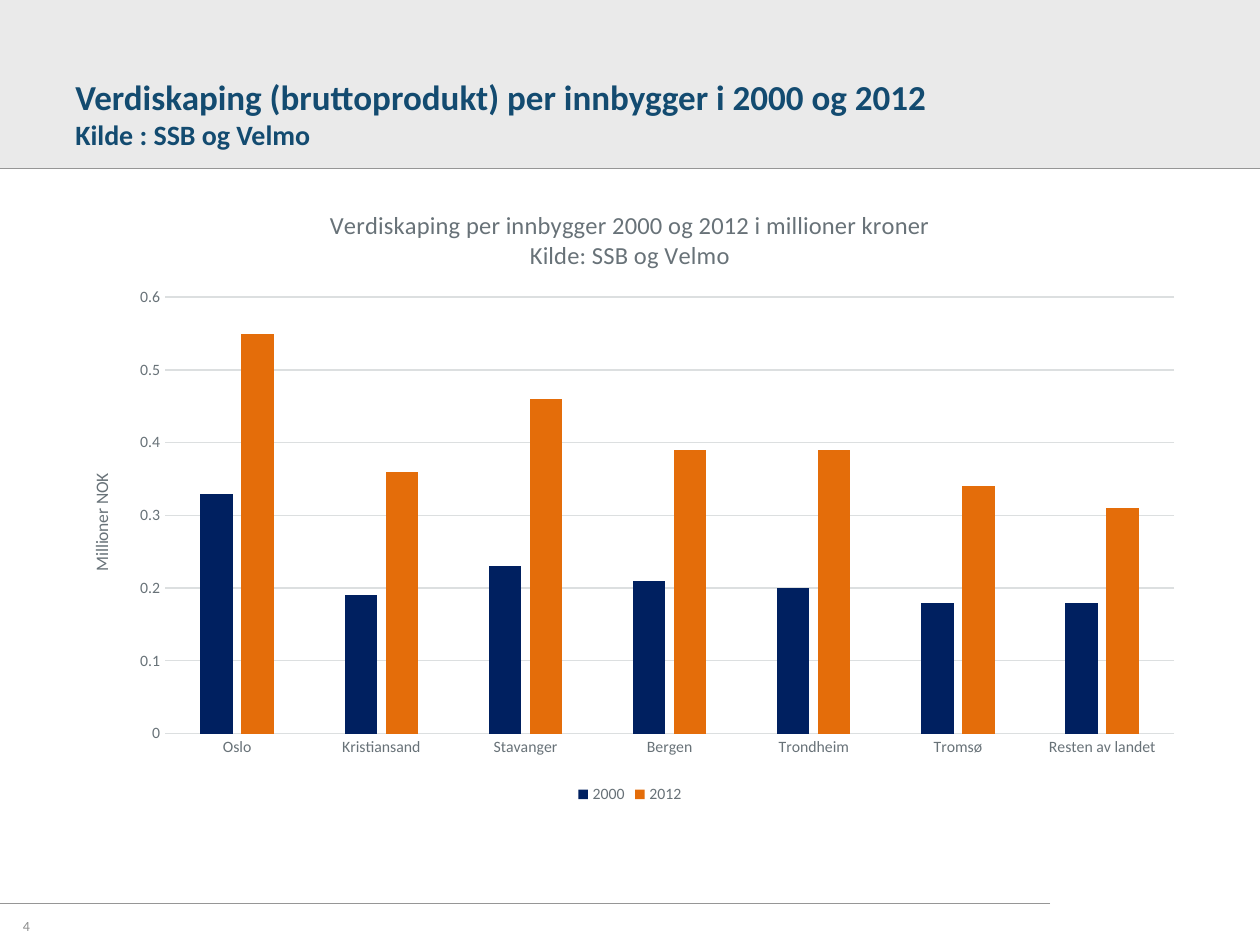
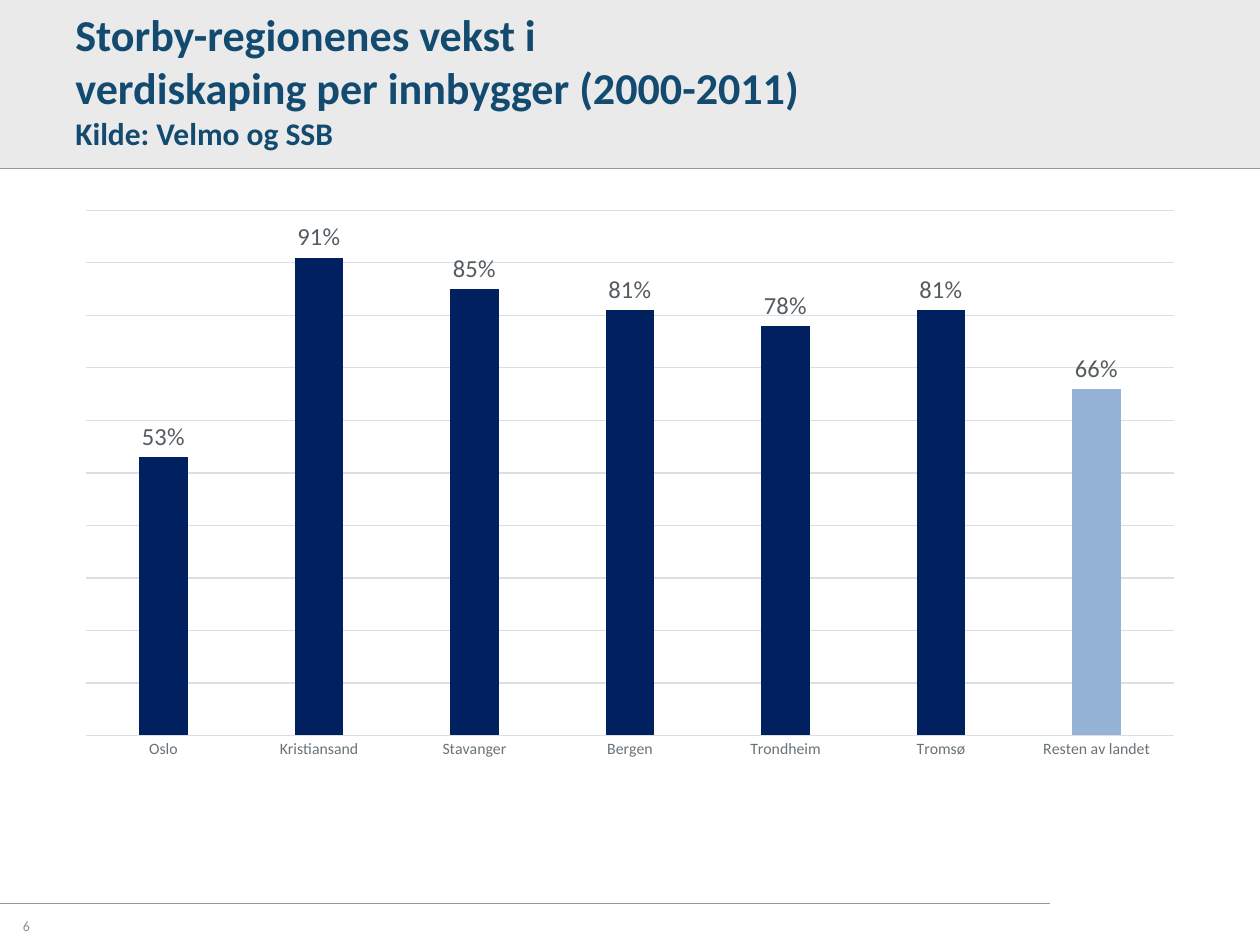
from lxml import etree
from pptx import Presentation
from pptx.chart.data import CategoryChartData
from pptx.dml.color import RGBColor
from pptx.enum.chart import (XL_CHART_TYPE as CHART, XL_LABEL_POSITION as LABEL,
                             XL_LEGEND_POSITION as LEGEND, XL_TICK_MARK as TICK)
from pptx.enum.shapes import MSO_CONNECTOR as CONNECTOR, MSO_SHAPE as SHAPE
from pptx.enum.text import MSO_ANCHOR as ANCHOR
from pptx.oxml.ns import qn
from pptx.util import Cm, Pt

BAND = RGBColor(0xEA, 0xEA, 0xEA)
RULE = RGBColor(0x96, 0x96, 0x96)
TITLE = RGBColor(0x13, 0x4B, 0x70)
NUMBER = RGBColor(0x8D, 0x8E, 0x8E)
AXIS_TEXT = RGBColor(0x68, 0x72, 0x78)
LABEL_TEXT = RGBColor(0x54, 0x5C, 0x61)
GRID = RGBColor(0xDC, 0xDF, 0xE0)
NAVY = RGBColor(0x00, 0x20, 0x60)
ORANGE = RGBColor(0xE4, 0x6D, 0x0A)
PALE_BLUE = RGBColor(0x95, 0xB3, 0xD7)

FONT = "Calibri"
BAND_BOTTOM = 3.39
REGIONS = ["Oslo", "Kristiansand", "Stavanger", "Bergen", "Trondheim",
           "Tromsø", "Resten av landet"]


class Deck:
    """Holds the presentation, its shared style and the current slide."""

    def __init__(self):
        self.prs = Presentation()
        self.prs.slide_width, self.prs.slide_height = Cm(25.4), Cm(19.05)
        self.s = None

    def slide(self, number, title):
        """Start a slide with its band, rules, title and number."""
        self.s = self.prs.slides.add_slide(self.prs.slide_layouts[6])
        self.rule(21.17, 18.21)
        self.band()
        self.rule(25.4, BAND_BOTTOM)
        self.text((1.27, 0, 22.86, 3.18), title, TITLE, ANCHOR.BOTTOM, True)
        self.text((0.21, 18.16, 5.92, 1.02), [(str(number), 8)], NUMBER, ANCHOR.MIDDLE)

    def band(self):
        """Fill the band behind the title."""
        sp = self.s.shapes.add_shape(SHAPE.RECTANGLE, 0, 0, Cm(25.4), Cm(BAND_BOTTOM))
        sp.shadow.inherit = False
        sp.fill.solid()
        sp.fill.fore_color.rgb = BAND
        sp.line.fill.background()

    def rule(self, right, y):
        """Draw a thin horizontal line from the left edge."""
        line = self.s.shapes.add_connector(CONNECTOR.STRAIGHT, Cm(right), Cm(y), 0, Cm(y))
        line.line.color.rgb = RULE
        line.line.width = Pt(0.25)
        etree.SubElement(line._element.spPr, qn("a:effectLst"))

    def text(self, box, lines, color, anchor, bold=False):
        """Add a text box with one paragraph per (text, size) pair."""
        tf = self.s.shapes.add_textbox(*map(Cm, box)).text_frame
        tf.word_wrap = True
        tf.vertical_anchor = anchor
        self.paragraphs(tf, lines, color, bold)

    def paragraphs(self, tf, lines, color, bold=False):
        """Fill a text frame with (text, size) paragraphs."""
        for i, (text, size) in enumerate(lines):
            p = tf.add_paragraph() if i else tf.paragraphs[0]
            p.text = text
            self.font(p.font, size, color, bold)

    def font(self, font, size, color, bold=False):
        """Style any font object."""
        font.name, font.size, font.bold = FONT, Pt(size), bold
        font.color.rgb = color

    def columns(self, box, plot, series, top, number_format="General"):
        """Add a clustered column chart of the regions."""
        data = CategoryChartData(number_format=number_format)
        data.categories = REGIONS
        for name, values, _ in series:
            data.add_series(name, values)
        chart = self.s.shapes.add_chart(
            CHART.COLUMN_CLUSTERED, *map(Cm, box), data).chart
        chart.has_title = chart.has_legend = False
        self.font(chart.font, 9, AXIS_TEXT)
        bars = chart.plots[0]
        bars.gap_width, bars.overlap = 219, -27
        bars.vary_by_categories = False
        for ser, (_, _, color) in zip(bars.series, series):
            ser.invert_if_negative = False
            ser.format.fill.solid()
            ser.format.fill.fore_color.rgb = color
        self.axes(chart, top)
        self.layout(chart, plot)
        return chart

    def axes(self, chart, top):
        """Style both axes and the grid lines."""
        cat, val = chart.category_axis, chart.value_axis
        for axis in (cat, val):
            axis.major_tick_mark = axis.minor_tick_mark = TICK.NONE
            self.font(axis.tick_labels.font, 9, AXIS_TEXT)
        val.minimum_scale, val.maximum_scale, val.major_unit = 0, top, 0.1
        val.format.line.fill.background()
        for part in (cat, val.major_gridlines):
            part.format.line.color.rgb = GRID
            part.format.line.width = Pt(0.75)

    def layout(self, chart, plot):
        """Place the inner plot area by fractions of the chart."""
        area = chart._chartSpace.find(".//" + qn("c:plotArea"))
        for old in area.findall(qn("c:layout")):
            area.remove(old)
        layout = etree.Element(qn("c:layout"))
        manual = etree.SubElement(layout, qn("c:manualLayout"))
        settings = [("layoutTarget", "inner"), ("xMode", "edge"), ("yMode", "edge")]
        for tag, value in settings + list(zip("xywh", plot)):
            etree.SubElement(manual, qn("c:" + tag)).set("val", str(value))
        area.insert(0, layout)

    def headings(self, chart, title, axis_title):
        """Add the chart title, the value axis title and the legend."""
        chart.has_title = True
        self.paragraphs(chart.chart_title.text_frame, title, AXIS_TEXT)
        chart.chart_title.include_in_layout = False
        self.paragraphs(chart.value_axis.axis_title.text_frame, axis_title, AXIS_TEXT)
        chart.has_legend = True
        chart.legend.position = LEGEND.BOTTOM
        chart.legend.include_in_layout = False
        self.font(chart.legend.font, 9, AXIS_TEXT)

    def value_labels(self, chart, number_format):
        """Show values above the columns in place of the value axis."""
        chart.value_axis.visible = False
        labels = chart.plots[0].series[0].data_labels
        labels.show_value = True
        labels.position = LABEL.OUTSIDE_END
        labels.number_format, labels.number_format_is_linked = number_format, False
        self.font(labels.font, 14, LABEL_TEXT)

    def highlight(self, chart, index, color):
        """Recolour one column of the first series."""
        fill = chart.plots[0].series[0].points[index].format.fill
        fill.solid()
        fill.fore_color.rgb = color


def main():
    """Build both slides and save them."""
    deck = Deck()
    deck.slide(4, [("Verdiskaping (bruttoprodukt) per innbygger i 2000 og 2012", 20),
                   ("Kilde : SSB og Velmo", 16)])
    chart = deck.columns(
        (1.27, 3.73, 22.86, 12.57), (0.09, 0.18, 0.89, 0.7),
        [("2000", [0.33, 0.19, 0.23, 0.21, 0.2, 0.18, 0.18], NAVY),
         ("2012", [0.55, 0.36, 0.46, 0.39, 0.39, 0.34, 0.31], ORANGE)], 0.6)
    deck.headings(
        chart, [("Verdiskaping per innbygger 2000 og 2012 i millioner kroner", 14),
                ("Kilde: SSB og Velmo", 14)], [("Millioner NOK", 10)])

    deck.slide(6, [("Storby-regionenes vekst i", 25.2),
                   ("verdiskaping per innbygger (2000-2011)", 25.2),
                   ("Kilde: Velmo og SSB", 18)])
    chart = deck.columns(
        (1.27, 4.01, 22.86, 11.51), (0.02, 0.02, 0.96, 0.92),
        [("Series 1", [0.53, 0.91, 0.85, 0.81, 0.78, 0.81, 0.66], NAVY)], 1, "0%")
    deck.value_labels(chart, "0%")
    deck.highlight(chart, REGIONS.index("Resten av landet"), PALE_BLUE)
    deck.prs.save("out.pptx")


if __name__ == "__main__":
    main()
